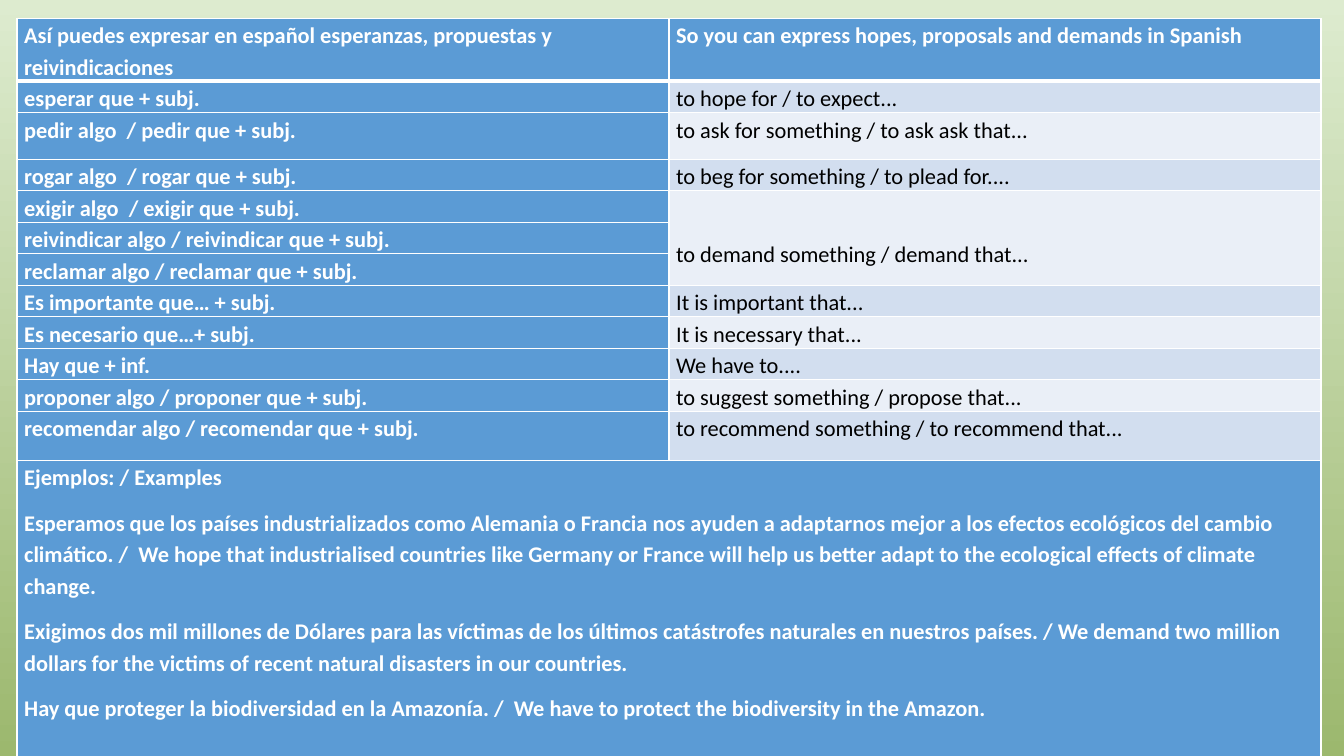
import pptx
import pptx.dml.color
import pptx.oxml
import pptx.oxml.ns
import pptx.util

Cm, Pt = pptx.util.Cm, pptx.util.Pt

COLORS = {
    "sky": "DDEBCF", "grass": "9CB86E", "white": "FFFFFF", "black": "000000",
    "blue": "5B9BD5", "band_dark": "D2DEEF", "band_light": "EAEFF7",
}

HEADER = ("Así puedes expresar en español esperanzas, propuestas y reivindicaciones",
          "So you can express hopes, proposals and demands in Spanish")

# Spanish phrase, English phrase (None: shares the cell above), row height in cm
PHRASES = [
    ("esperar que + subj.", "to hope for / to expect...", 0.69),
    ("pedir algo  / pedir que + subj.", "to ask for something / to ask ask that...", 1.17),
    ("rogar algo  / rogar que + subj.", "to beg for something / to plead for....", 0.69),
    ("exigir algo  / exigir que + subj.", "to demand something / demand that...", 0.69),
    ("reivindicar algo / reivindicar que + subj.", None, 0.69),
    ("reclamar algo / reclamar que + subj.", None, 0.69),
    ("Es importante que… + subj.", "It is important that...", 0.69),
    ("Es necesario que…+ subj.", "It is necessary that...", 0.69),
    ("Hay que + inf.", "We have to....", 0.69),
    ("proponer algo / proponer que + subj.", "to suggest something / propose that...", 0.69),
    ("recomendar algo / recomendar que + subj.",
     "to recommend something / to recommend that...", 1.24),
]

EXAMPLES = [
    "Ejemplos: / Examples",
    "Esperamos que los países industrializados como Alemania o Francia nos ayuden a "
    "adaptarnos mejor a los efectos ecológicos del cambio climático. /  We hope that "
    "industrialised countries like Germany or France will help us better adapt to the "
    "ecological effects of climate change.",
    "Exigimos dos mil millones de Dólares para las víctimas de los últimos catástrofes "
    "naturales en nuestros países. / We demand two million dollars for the victims of "
    "recent natural disasters in our countries.",
    "Hay que proteger la biodiversidad en la Amazonía. /  We have to protect the "
    "biodiversity in the Amazon.",
]


def rgb(name):
    return pptx.dml.color.RGBColor.from_string(COLORS[name])


def apply(target, formats):
    for name, value in formats.items():
        setattr(target, name, value)


class SlideBuilder:
    """Holds the text style and the current slide."""

    font_format = {"name": "Calibri", "size": Pt(16)}
    paragraph_format = {"line_spacing": 1.15, "space_after": Pt(10)}
    cell_format = {"margin_left": Cm(0.18), "margin_right": Cm(0.18),
                   "margin_top": 0, "margin_bottom": 0}

    def __init__(self, slide):
        self.slide = slide

    def background(self, *colors):
        fill = self.slide.background.fill
        fill.gradient()
        fill.gradient_angle = 270
        for stop, color in zip(fill.gradient_stops, colors):
            stop.color.rgb = rgb(color)

    def table(self, left, top, widths, heights):
        frame = self.slide.shapes.add_table(
            len(heights), len(widths), Cm(left), Cm(top), Cm(sum(widths)), Cm(sum(heights)))
        table = frame.table
        apply(table, {"first_row": False, "horz_banding": False})
        for column, width in zip(table.columns, widths):
            column.width = Cm(width)
        for row, height in zip(table.rows, heights):
            row.height = Cm(height)
        return table

    def cell_box(self, cell, fill, top_line=1, bottom_line=1):
        properties = cell._tc.get_or_add_tcPr()
        for side, width in zip("LRTB", (1, 1, top_line, bottom_line)):
            properties.append(pptx.oxml.parse_xml(
                f'<a:ln{side} {pptx.oxml.ns.nsdecls("a")} w="{Pt(width)}"><a:solidFill>'
                f'<a:srgbClr val="{COLORS["white"]}"/></a:solidFill></a:ln{side}>'))
        cell.fill.solid()
        cell.fill.fore_color.rgb = rgb(fill)
        apply(cell, self.cell_format)

    def cell_text(self, cell, texts, color="white", bold=True):
        cell.text_frame.text = "\n".join(texts)
        for paragraph in cell.text_frame.paragraphs:
            apply(paragraph, self.paragraph_format)
            font = paragraph.runs[0].font
            apply(font, {**self.font_format, "bold": bold})
            font.color.rgb = rgb(color)


def main():
    presentation = pptx.Presentation()
    apply(presentation, {"slide_width": Cm(33.87), "slide_height": Cm(19.05)})
    builder = SlideBuilder(presentation.slides.add_slide(presentation.slide_layouts[6]))
    builder.background("sky", "grass")

    heights = [1.42] + [height for _, _, height in PHRASES] + [7.75]
    table = builder.table(0.43, 0.46, [16.43, 16.43], heights)

    # Header, with a thick rule below it
    for column, title in enumerate(HEADER):
        cell = table.cell(0, column)
        builder.cell_box(cell, "blue", bottom_line=3)
        builder.cell_text(cell, [title])

    # Phrases, with banded translations
    for row, (spanish, english, _) in enumerate(PHRASES, start=1):
        band = "band_dark" if row % 2 else "band_light"
        top_line = 3 if row == 1 else 1
        phrase, translation = table.cell(row, 0), table.cell(row, 1)
        builder.cell_box(phrase, "blue", top_line)
        builder.cell_box(translation, band, top_line)
        builder.cell_text(phrase, [spanish])
        if english:
            builder.cell_text(translation, [english], "black", False)

    # One translation shared by the three verbs of demand
    demand = table.cell(4, 1)
    demand.merge(table.cell(6, 1))
    demand.margin_top = Cm(1.16)

    # Examples across both columns
    last = len(heights) - 1
    examples = table.cell(last, 0)
    for column in range(2):
        builder.cell_box(table.cell(last, column), "blue")
    examples.merge(table.cell(last, 1))
    builder.cell_text(examples, EXAMPLES)

    presentation.save("out.pptx")


if __name__ == "__main__":
    main()
